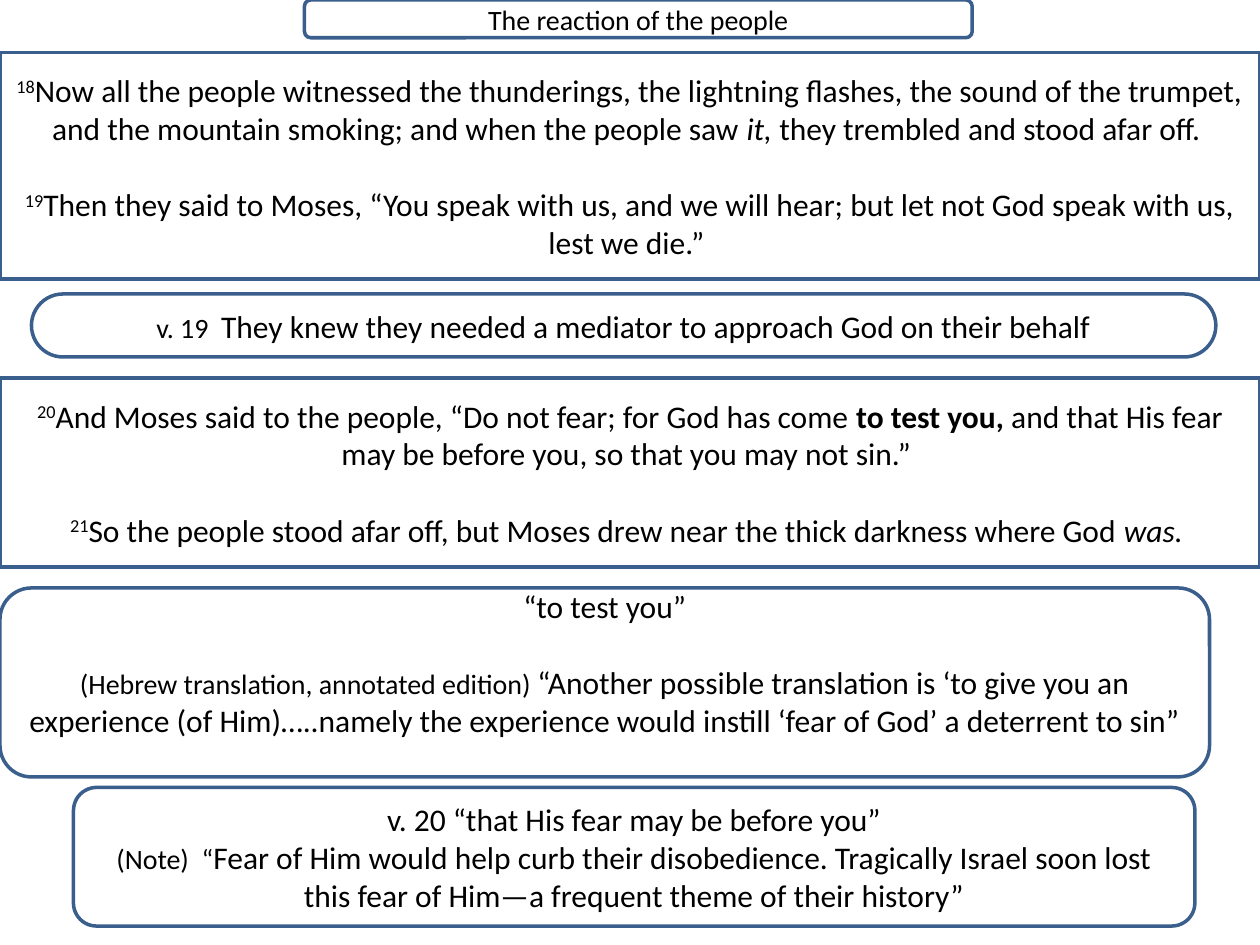
"""Build a slide of scripture panels and comments on the reaction of the people."""
from dataclasses import dataclass
from typing import Optional

from pptx import Presentation
from pptx.dml.color import RGBColor
from pptx.enum.shapes import MSO_SHAPE as Preset
from pptx.enum.text import MSO_ANCHOR as Anchor, PP_ALIGN as Align
from pptx.slide import Slide
from pptx.util import Inches, Pt

CELL = Inches(1 / 12)
COLUMNS, ROWS = 120, 90


@dataclass(frozen=True)
class Theme:
    font: str = "Calibri"
    ink: RGBColor = RGBColor(0, 0, 0)
    paper: RGBColor = RGBColor(255, 255, 255)
    border: RGBColor = RGBColor(0x3A, 0x5F, 0x8C)
    border_width: Pt = Pt(2)
    body: Pt = Pt(18)
    small: Pt = Pt(16)
    blank_line: Pt = Pt(22)


THEME = Theme()


@dataclass(frozen=True)
class Phrase:
    text: str
    size: Pt = THEME.body
    bold: bool = False
    italic: bool = False
    raised: bool = False


@dataclass(frozen=True)
class Passage:
    phrases: tuple[Phrase, ...]
    gap_before: bool = False


@dataclass(frozen=True)
class Panel:
    column: float
    row: float
    columns: float
    rows: float
    passages: tuple[Passage, ...]
    preset: Preset = Preset.ROUNDED_RECTANGLE
    roundness: Optional[float] = None
    gap_below: bool = False


def verse(number: int, *phrases: Phrase, gap_before: bool = False) -> Passage:
    """Return a passage that opens with its raised verse number."""
    return Passage((Phrase(str(number), raised=True), *phrases), gap_before)


def scripture(row: float, rows: float, *verses: Passage) -> Panel:
    """Return a square-cornered panel as wide as the slide."""
    return Panel(0, row, COLUMNS, rows, verses, Preset.RECTANGLE)


PANELS = (
    scripture(
        5, 21.6,
        verse(
            18,
            Phrase("Now all the people witnessed the thunderings, the lightning flashes, "
                   "the sound of the trumpet, and the mountain smoking; "
                   "and when the people saw "),
            Phrase("it,", italic=True),
            Phrase(" they trembled and stood afar off. "),
        ),
        verse(
            19,
            Phrase("Then they said to Moses, “You speak with us, and we will hear; "
                   "but let not God speak with us, lest we die.” "),
            gap_before=True,
        ),
    ),
    Panel(3, 28, 112.8, 6, (
        Passage((
            Phrase("v. 19  ", THEME.small),
            Phrase("They knew they needed a mediator to approach God on their behalf"),
        )),
    ), roundness=0.5),
    scripture(
        36, 18,
        verse(
            20,
            Phrase("And Moses said to the people, “Do not fear; for God has come "),
            Phrase("to test you, ", bold=True),
            Phrase("and that His fear may be before you, so that you may not sin.” "),
        ),
        verse(
            21,
            Phrase("So the people stood afar off, but Moses drew near "
                   "the thick darkness where God "),
            Phrase("was. ", italic=True),
            gap_before=True,
        ),
    ),
    Panel(7, 75, 106.8, 13.2, (
        Passage((Phrase("v. 20 “that His fear may be before you”"),)),
        Passage((
            Phrase("(Note)  “", THEME.small),
            Phrase("Fear of Him would help curb their disobedience. Tragically Israel "
                   "soon lost this fear of Him—a frequent theme of their history”"),
        )),
    )),
    Panel(0, 56, 115.2, 18, (
        Passage((Phrase("“to test you”"),)),
        Passage((
            Phrase("(Hebrew translation, annotated edition) ", THEME.small),
            Phrase("“Another possible translation is ‘to give you an experience "
                   "(of Him)…..namely the experience would instill ‘fear of God’ "
                   "a deterrent to sin”"),
        ), gap_before=True),
    ), gap_below=True),
    Panel(29, 0, 63.6, 3.6, (
        Passage((Phrase("The reaction of the people", THEME.small),)),
    )),
)


def write_phrase(paragraph, phrase: Phrase) -> None:
    """Add one styled run to a paragraph."""
    run = paragraph.add_run()
    run.text = phrase.text
    font = run.font
    font.name, font.size = THEME.font, phrase.size
    font.bold, font.italic = phrase.bold, phrase.italic
    font.color.rgb = THEME.ink
    if phrase.raised:
        run._r.get_or_add_rPr().set("baseline", "30000")


def draw_panel(slide: Slide, panel: Panel) -> None:
    """Draw an outlined panel with its centred passages."""
    bounds = (round(cells * CELL)
              for cells in (panel.column, panel.row, panel.columns, panel.rows))
    outline = slide.shapes.add_shape(panel.preset, *bounds)
    outline.shadow.inherit = False
    outline.fill.solid()
    outline.fill.fore_color.rgb = THEME.paper
    outline.line.color.rgb = THEME.border
    outline.line.width = THEME.border_width
    if panel.roundness is not None:
        outline.adjustments[0] = panel.roundness

    frame = outline.text_frame
    frame.word_wrap = True
    frame.vertical_anchor = Anchor.MIDDLE
    if panel.gap_below:
        frame.margin_bottom += THEME.blank_line
    for index, passage in enumerate(panel.passages):
        paragraph = frame.add_paragraph() if index else frame.paragraphs[0]
        paragraph.alignment = Align.CENTER
        if passage.gap_before:
            paragraph.space_before = THEME.blank_line
        for phrase in passage.phrases:
            write_phrase(paragraph, phrase)


def main() -> None:
    """Build and save the slide."""
    deck = Presentation()
    deck.slide_width, deck.slide_height = COLUMNS * CELL, ROWS * CELL
    slide = deck.slides.add_slide(deck.slide_layouts[6])
    for panel in PANELS:
        draw_panel(slide, panel)
    deck.save("out.pptx")


if __name__ == "__main__":
    main()
